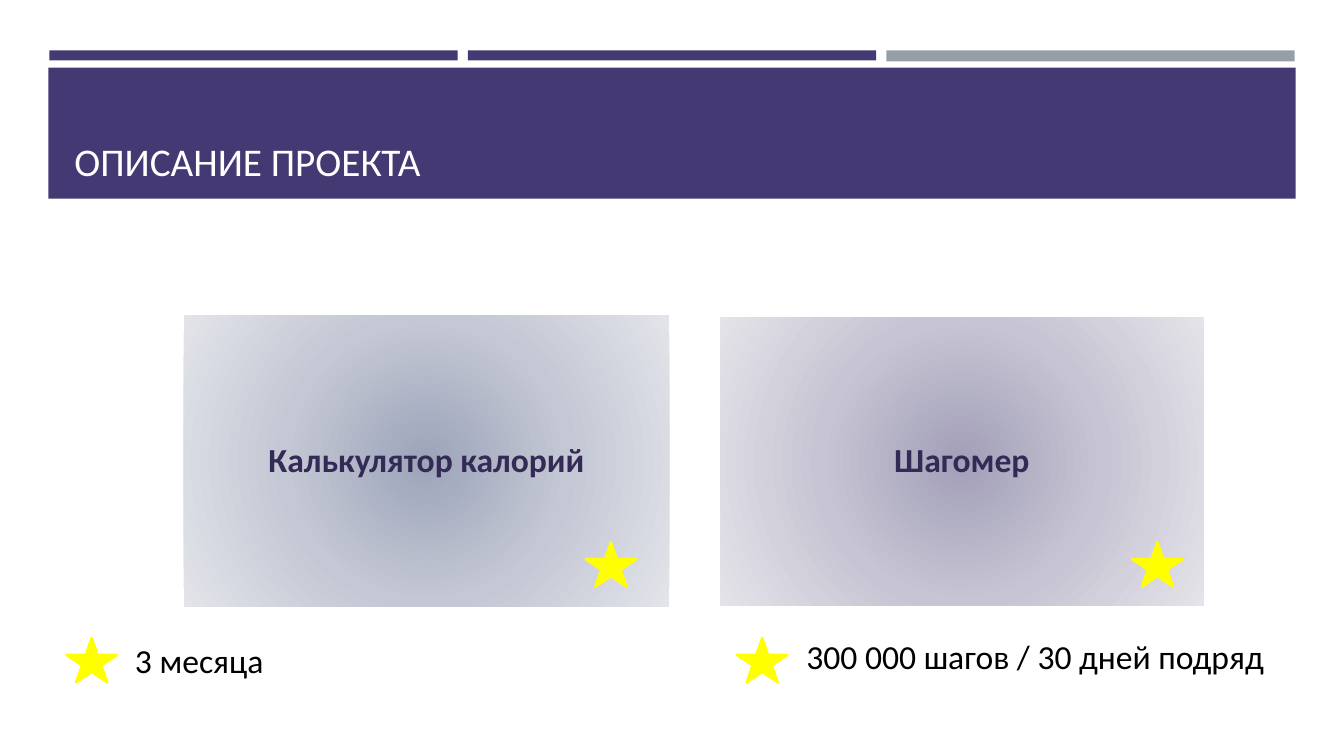
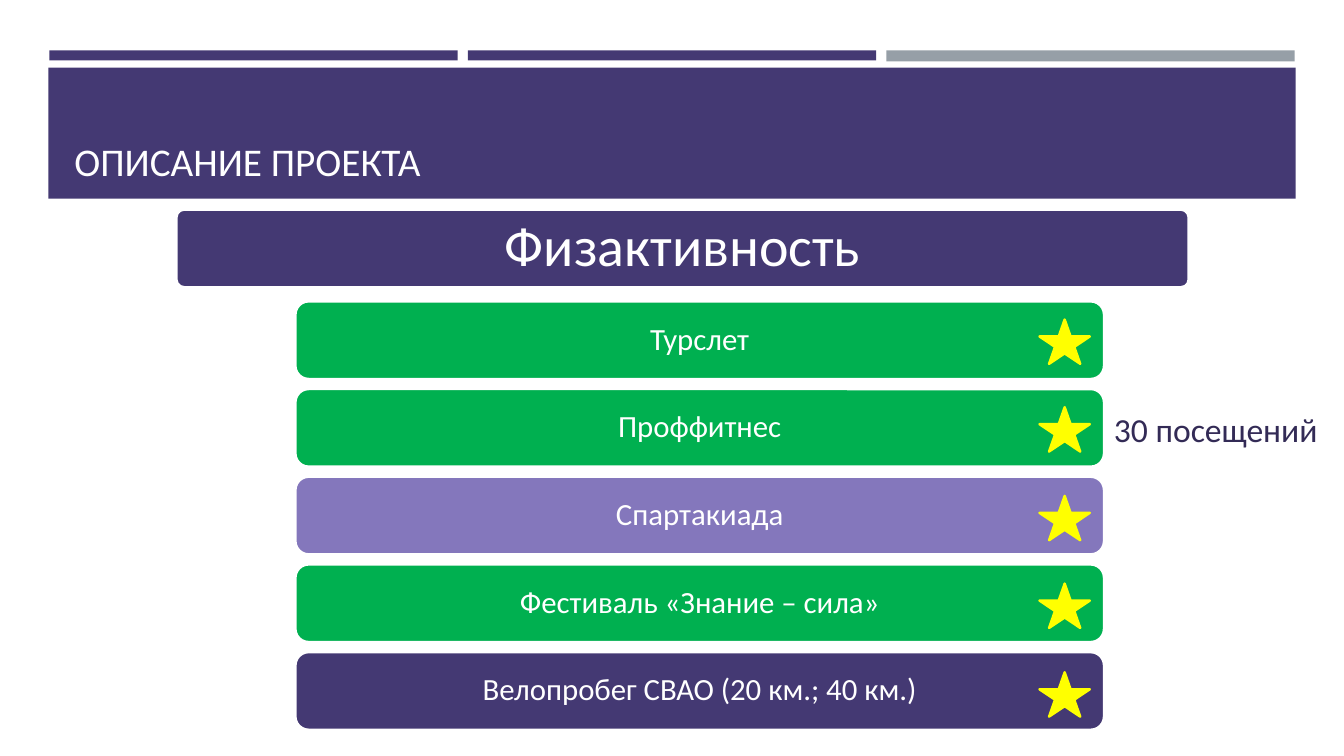
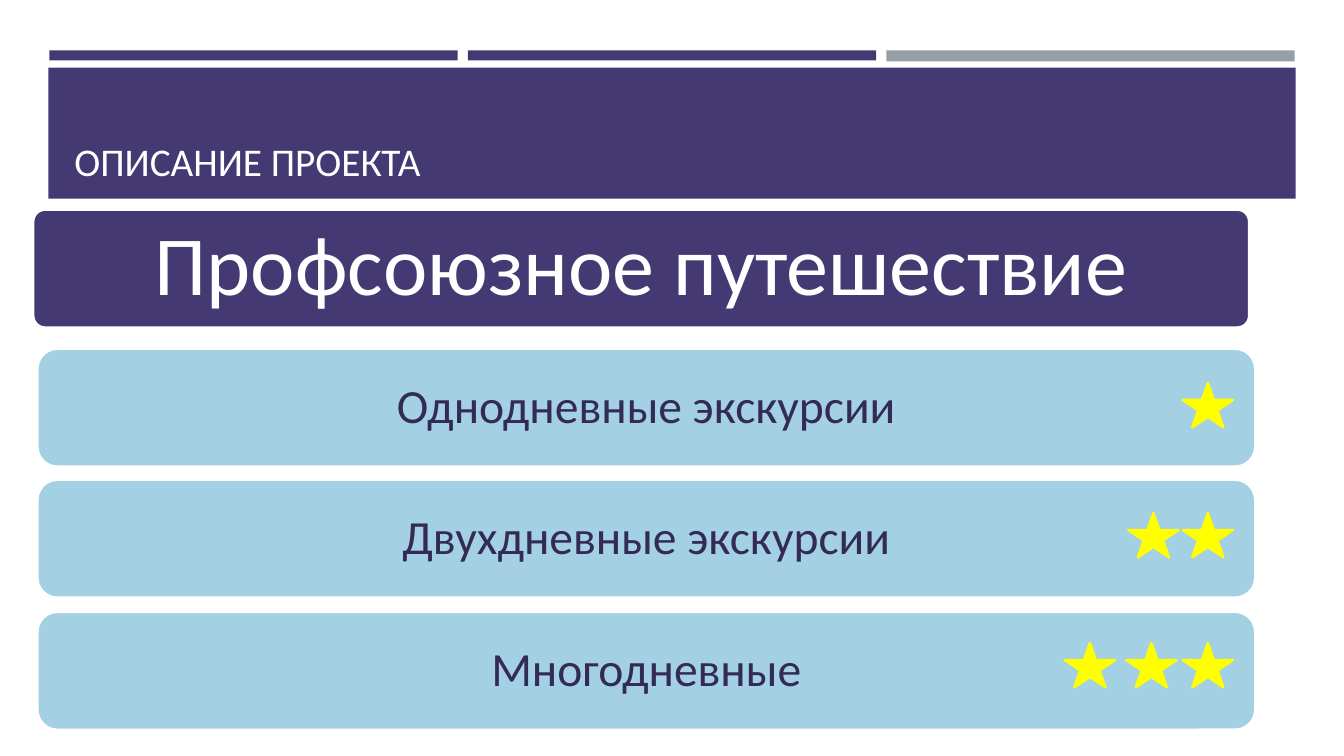
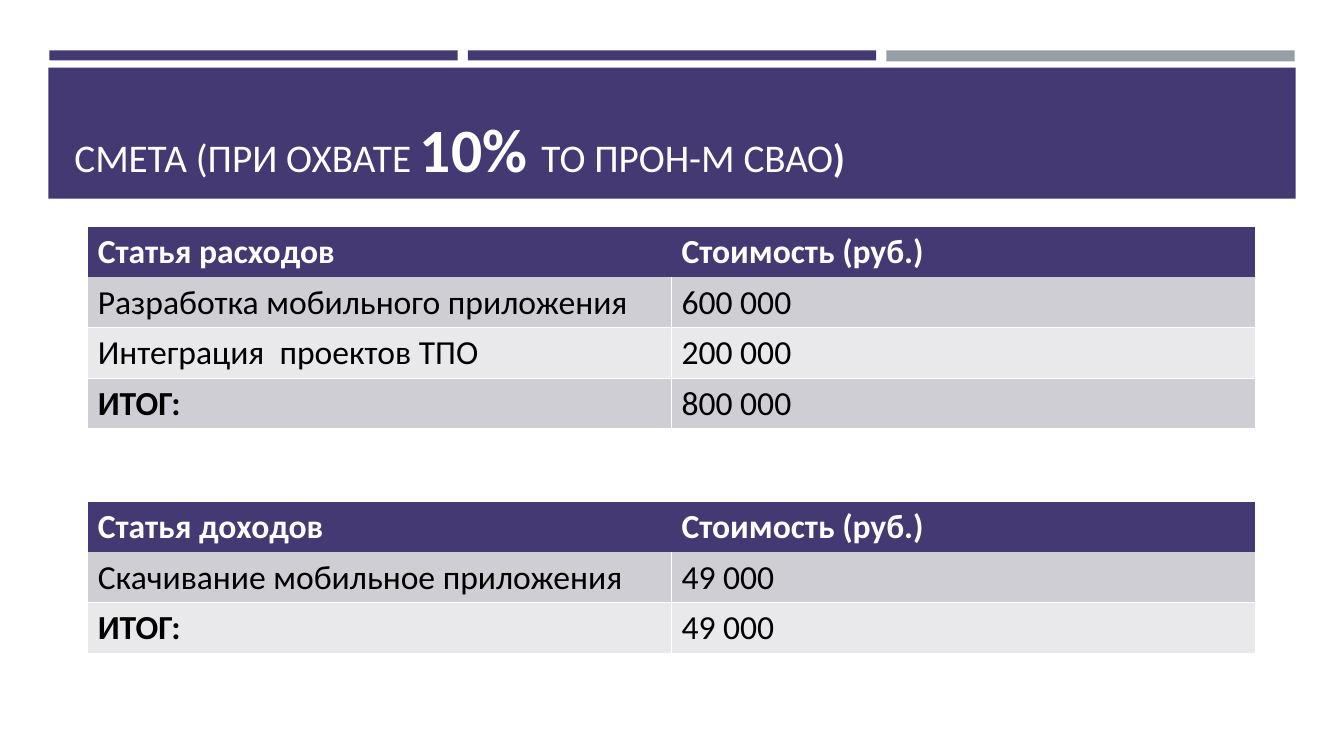
from typing import Any, NamedTuple

from pptx import Presentation as Deck
from pptx.dml.color import RGBColor as Rgb
from pptx.enum.shapes import MSO_SHAPE as Kind
from pptx.enum.text import MSO_ANCHOR as Anchor, PP_ALIGN as Align
from pptx.oxml import parse_xml as build
from pptx.oxml.ns import nsdecls, qn
from pptx.util import Emu, Pt

SCALE = 9144
FONT = "Calibri"
PLUM, LILAC, GRAY = "443973", "8477BC", "969FA7"
GREEN, SKY, GOLD = "00B050", "A3D0E2", "FFFF00"
INK, BLACK, WHITE = "332B56", "000000", "FFFFFF"
DARK, PALE = "CFCED5", "E9E8EB"
BARE = "{2D5ABB26-0587-4C30-8999-92F81FD0307C}"


class Box(NamedTuple):
    x: int
    y: int
    w: int
    h: int


class Run(NamedTuple):
    text: str
    size: int
    bold: bool = False


class Card(NamedTuple):
    box: Box
    text: str
    stops: tuple[str, str, str]
    edge: str | None


class Bar(NamedTuple):
    text: str
    fill: str
    stars: tuple[int, ...]


class Sheet(NamedTuple):
    top: int
    rows: list[tuple[str, str]]


MID = {"word_wrap": True, "vertical_anchor": Anchor.MIDDLE,
       "margin_left": 0, "margin_right": 0, "margin_top": 0, "margin_bottom": 0}
LOW = {"word_wrap": True, "vertical_anchor": Anchor.BOTTOM}
TOP = {"word_wrap": True, "vertical_anchor": Anchor.TOP}
TIGHT = {"alignment": Align.CENTER, "line_spacing": 0.9}
STRIPS = [(Box(49, 50, 405, 10), PLUM), (Box(879, 50, 405, 11), GRAY),
          (Box(464, 50, 405, 10), PLUM), (Box(48, 67, 1237, 130), PLUM)]
ABOUT = [Run("ОПИСАНИЕ ПРОЕКТА", 28)]
COSTS = [Run("СМЕТА (ПРИ ОХВАТЕ ", 28), Run("10% ", 44, True),
         Run("ТО ПРОН-М СВАО", 28), Run(")", 28, True)]
CARDS = [
    Card(Box(182, 313, 482, 289), "Калькулятор калорий", ("9DA4BA", "C4C8D4", "E2E4E9"), None),
    Card(Box(713, 313, 482, 289), "Шагомер", ("A29FB8", "C7C5D3", "E4E3E9"), WHITE),
]
SPORTS = [Bar(text, fill, (1031,)) for text, fill in [
    ("Турслет", GREEN), ("Проффитнес", GREEN), ("Спартакиада", LILAC),
    ("Фестиваль «Знание – сила»", GREEN), ("Велопробег СВАО (20 км.; 40 км.)", PLUM)]]
TRIPS = [Bar("Однодневные экскурсии", SKY, (1173,)),
         Bar("Двухдневные экскурсии", SKY, (1173, 1119)),
         Bar("Многодневные", SKY, (1173, 1117, 1056))]
SHEETS = [
    Sheet(225, [("Статья расходов", "Стоимость (руб.)"),
                ("Разработка мобильного приложения", "600 000"),
                ("Интеграция  проектов ТПО", "200 000"), ("ИТОГ:", "800 000")]),
    Sheet(498, [("Статья доходов", "Стоимость (руб.)"),
                ("Скачивание мобильное приложения", "49 000"), ("ИТОГ:", "49 000")]),
]


def px(num: int) -> Emu:
    return Emu(num * SCALE)


def place(box: Box) -> list[Emu]:
    return [px(num) for num in box]


def tint(code: str) -> Rgb:
    return Rgb.from_string(code)


def apply(item: Any, look: dict[str, Any]) -> None:
    for key, val in look.items():
        setattr(item, key, val)


def write(frame: Any, runs: list[Run], ink: str, look: dict[str, Any],
          para: dict[str, Any] | None = None) -> None:
    apply(frame, look)
    line = frame.paragraphs[0]
    apply(line, para or {})
    for run in runs:
        part = line.add_run()
        part.text = run.text
        apply(part.font, {"name": FONT, "size": Pt(run.size), "bold": run.bold})
        part.font.color.rgb = tint(ink)


def draw(slide: Any, kind: Kind, box: Box, fill: str, edge: str | None = None) -> Any:
    shape = slide.shapes.add_shape(kind, *place(box))
    shape.shadow.inherit = False
    shape.fill.solid()
    shape.fill.fore_color.rgb = tint(fill)
    if edge:
        shape.line.color.rgb = tint(edge)
        shape.line.width = Pt(1.75)
    else:
        shape.line.fill.background()
    return shape


def label(slide: Any, box: Box, runs: list[Run], ink: str, look: dict[str, Any]) -> None:
    write(slide.shapes.add_textbox(*place(box)).text_frame, runs, ink, look)


def star(slide: Any, x: int, y: int) -> None:
    draw(slide, Kind.STAR_5_POINT, Box(x, y, 50, 44), GOLD, GOLD)


def glow(shape: Any, stops: tuple[str, str, str]) -> None:
    marks = "".join(f'<a:gs pos="{i * 50000}"><a:srgbClr val="{code}"/></a:gs>'
                    for i, code in enumerate(stops))
    props = shape.fill._xPr
    props.replace(props.find(qn("a:solidFill")), build(
        f'<a:gradFill {nsdecls("a")} rotWithShape="1"><a:gsLst>{marks}</a:gsLst>'
        '<a:path path="circle"><a:fillToRect l="50000" t="50000" r="50000" b="50000"/>'
        '</a:path></a:gradFill>'))


def pill(slide: Any, box: Box, run: Run, fill: str, ink: str, bend: float) -> None:
    shape = draw(slide, Kind.ROUNDED_RECTANGLE, box, fill, WHITE)
    shape.adjustments[0] = bend
    write(shape.text_frame, [run], ink, MID, TIGHT)


def stack(slide: Any, bars: list[Bar], first: Box, size: int, ink: str,
          step: int, rise: int, climb: int) -> None:
    for i, bar in enumerate(bars):
        box = first._replace(y=first.y + i * step // 2)
        pill(slide, box, Run(bar.text, size), bar.fill, ink, 0.17)
        for x in bar.stars:
            star(slide, x, rise + i * climb // 2)


def edge(cell: Any) -> None:
    props = cell._tc.get_or_add_tcPr()
    for side in ("lnL", "lnR", "lnB"):
        props.append(build(
            f'<a:{side} {nsdecls("a")} w="12700"><a:solidFill>'
            f'<a:srgbClr val="{WHITE}"/></a:solidFill></a:{side}>'))


def grid(slide: Any, sheet: Sheet) -> None:
    count = len(sheet.rows)
    box = Box(87, sheet.top, 1158, 50 * count)
    table = slide.shapes.add_table(count, 2, *place(box)).table
    table._tbl.tblPr.find(qn("a:tableStyleId")).text = BARE
    for i, row in enumerate(sheet.rows):
        for j, text in enumerate(row):
            cell = table.cell(i, j)
            head = i == 0
            if not head:
                edge(cell)
            cell.fill.solid()
            cell.fill.fore_color.rgb = tint(PLUM if head else DARK if i % 2 else PALE)
            bold = head or text == "ИТОГ:"
            write(cell.text_frame, [Run(text, 24, bold)], WHITE if head else BLACK, {})


def start(deck: Any, title: list[Run]) -> Any:
    slide = deck.slides.add_slide(deck.slide_layouts[6])
    for box, fill in STRIPS:
        draw(slide, Kind.RECTANGLE, box, fill)
    label(slide, Box(64, 77, 1206, 111), title, WHITE, LOW)
    return slide


def apps(deck: Any) -> None:
    slide = start(deck, ABOUT)
    for card in CARDS:
        shape = draw(slide, Kind.RECTANGLE, card.box, card.stops[0], card.edge)
        glow(shape, card.stops)
        write(shape.text_frame, [Run(card.text, 24, True)], INK, MID, TIGHT)
    for x, y in [(581, 538), (1123, 538), (66, 633), (731, 633)]:
        star(slide, x, y)
    label(slide, Box(124, 630, 162, 50), [Run("3 месяца", 24)], BLACK, TOP)
    label(slide, Box(790, 626, 479, 50),
          [Run("300 000 шагов / 30 дней подряд", 24)], BLACK, TOP)


def sports(deck: Any) -> None:
    slide = start(deck, ABOUT)
    pill(slide, Box(175, 208, 1004, 77), Run("Физактивность", 40), PLUM, WHITE, 0.1)
    stack(slide, SPORTS, Box(293, 299, 802, 77), 22, WHITE, 174, 317, 175)
    label(slide, Box(1095, 401, 238, 50), [Run("30 посещений", 24)], INK, TOP)


def trips(deck: Any) -> None:
    slide = start(deck, ABOUT)
    pill(slide, Box(33, 208, 1206, 117), Run("Профсоюзное путешествие", 60), PLUM, WHITE, 0.1)
    stack(slide, TRIPS, Box(37, 346, 1208, 117), 34, INK, 261, 380, 258)


def costs(deck: Any) -> None:
    slide = start(deck, COSTS)
    for sheet in SHEETS:
        grid(slide, sheet)


def main() -> None:
    deck = Deck()
    apply(deck, {"slide_width": px(1333), "slide_height": px(750)})
    for page in (apps, sports, trips, costs):
        page(deck)
    deck.save("out.pptx")


if __name__ == "__main__":
    main()
